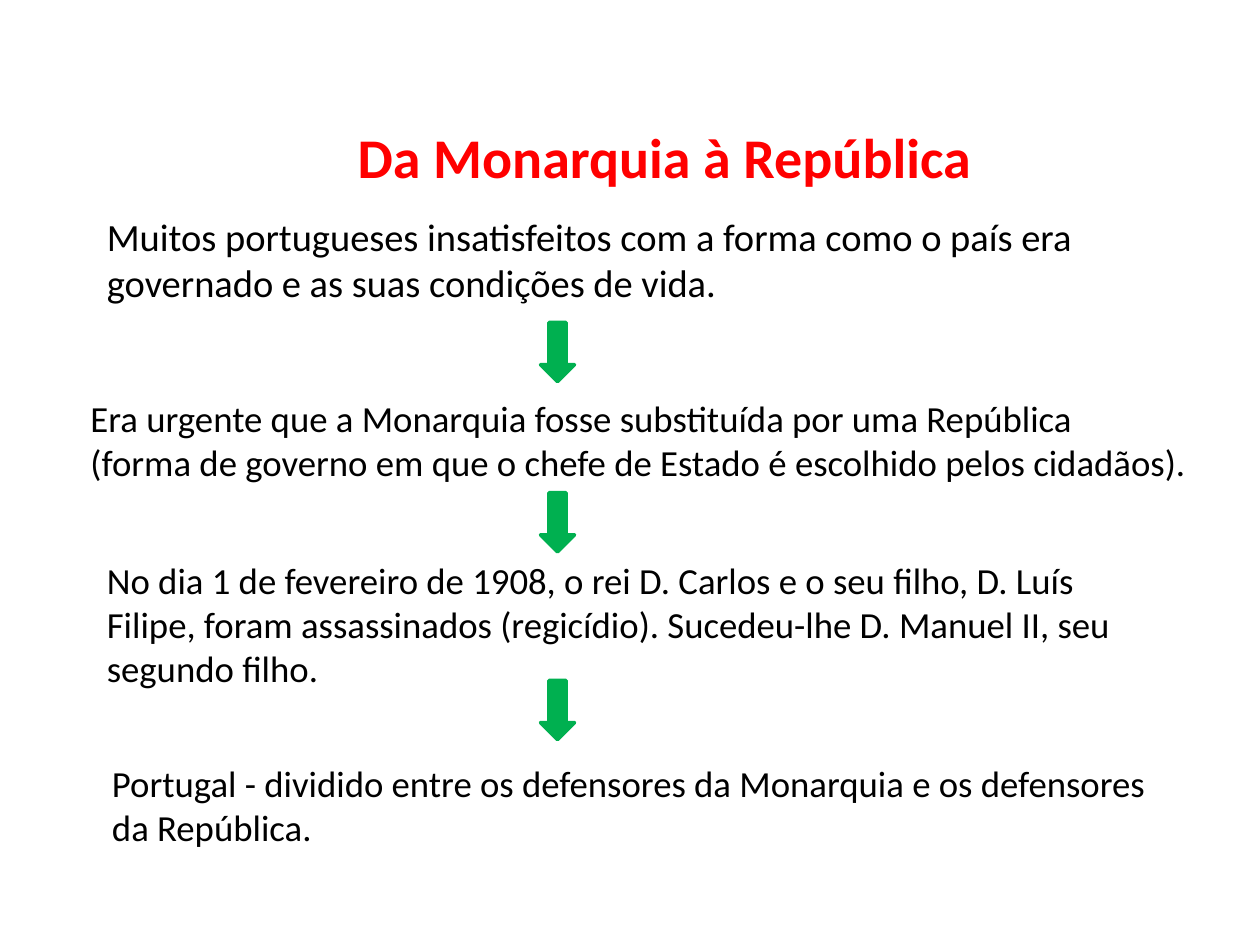
import pptx
import pptx.dml.color
import pptx.enum.shapes
import pptx.enum.text
import pptx.util
from pptx.util import Inches

COLORS = {"title": "FF0000", "body": "000000", "arrow": "00B050"}
FONT = "Calibri"
ARROW_LEFT, ARROW_WIDTH, ARROW_HEIGHT = 4.29, 0.27, 0.47
ARROW_TOPS = (2.56, 3.91, 5.4)

# left, top, width, height, text size, paragraphs
STAGES = (
    (0.75, 1.64, 8.43, 0.84, 22, (
        "Muitos portugueses insatisfeitos com a forma como o país era "
        "governado e as suas condições de vida.",)),
    (0.62, 3.09, 9.06, 0.81, 21, (
        "Era urgente que a Monarquia fosse substituída por uma República",
        "(forma de governo em que o chefe de Estado é escolhido pelos cidadãos).")),
    (0.75, 4.38, 8.27, 1.16, 21, (
        "No dia 1 de fevereiro de 1908, o rei D. Carlos e o seu filho, D. Luís "
        "Filipe, foram assassinados (regicídio). Sucedeu-lhe D. Manuel II, seu "
        "segundo filho.",)),
    (0.79, 5.99, 8.65, 0.81, 21, (
        "Portugal - dividido entre os defensores da Monarquia e os defensores "
        "da República.",)),
)


def rgb(name):
    return pptx.dml.color.RGBColor.from_string(COLORS[name])


def style_paragraph(paragraph, size, color, bold=False):
    paragraph.font.name = FONT
    paragraph.font.size = pptx.util.Pt(size)
    paragraph.font.bold = bold
    paragraph.font.color.rgb = rgb(color)


def set_title(slide, text):
    title = slide.shapes.title
    title.left, title.top = Inches(2.72), Inches(0.92)
    title.width, title.height = Inches(5.11), Inches(0.64)
    frame = title.text_frame
    frame.text = text
    frame.word_wrap = False
    frame.auto_size = pptx.enum.text.MSO_AUTO_SIZE.SHAPE_TO_FIT_TEXT
    heading = frame.paragraphs[0]
    heading.alignment = pptx.enum.text.PP_ALIGN.CENTER
    style_paragraph(heading, 32, "title", bold=True)


def add_stage(slide, left, top, width, height, size, paragraphs):
    stage = slide.shapes.add_textbox(
        Inches(left), Inches(top), Inches(width), Inches(height))
    frame = stage.text_frame
    frame.word_wrap = True
    frame.auto_size = pptx.enum.text.MSO_AUTO_SIZE.SHAPE_TO_FIT_TEXT
    frame.text = "\n".join(paragraphs)
    for paragraph in frame.paragraphs:
        style_paragraph(paragraph, size, "body")


def add_down_arrow(slide, top):
    arrow = slide.shapes.add_shape(
        pptx.enum.shapes.MSO_SHAPE.DOWN_ARROW, Inches(ARROW_LEFT), Inches(top),
        Inches(ARROW_WIDTH), Inches(ARROW_HEIGHT))
    arrow.shadow.inherit = False
    arrow.fill.solid()
    arrow.fill.fore_color.rgb = rgb("arrow")
    arrow.line.color.rgb = rgb("arrow")
    arrow.line.width = pptx.util.Pt(2)


def main():
    presentation = pptx.Presentation()
    presentation.slide_width = Inches(10)
    presentation.slide_height = Inches(7.5)
    slide = presentation.slides.add_slide(
        presentation.slide_layouts.get_by_name("Title Only"))
    set_title(slide, "Da Monarquia à República")
    for stage in STAGES:
        add_stage(slide, *stage)
    for top in ARROW_TOPS:
        add_down_arrow(slide, top)
    presentation.save("out.pptx")


if __name__ == "__main__":
    main()
